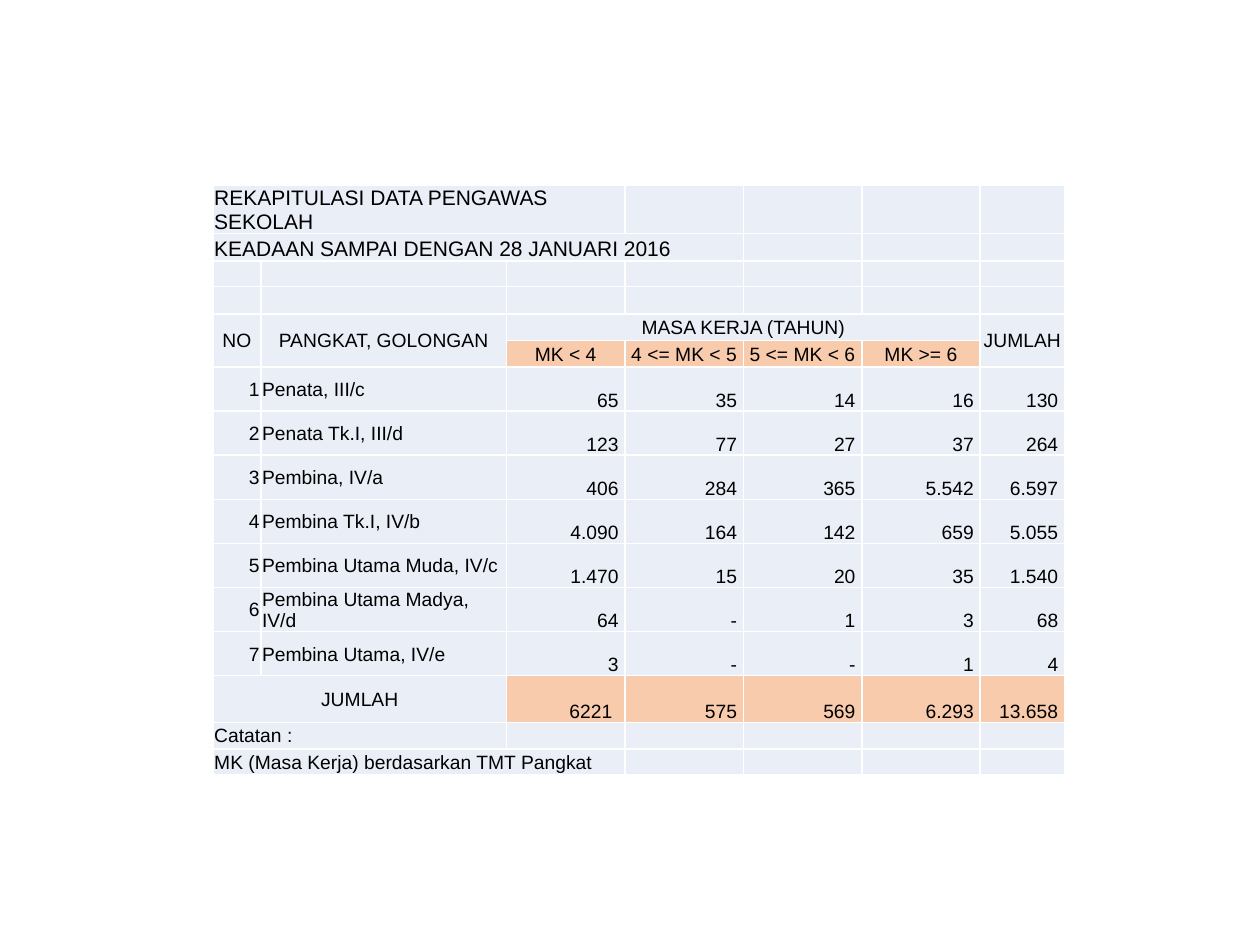
import pptx
import pptx.util
import pptx.dml.color
import pptx.enum.text
import pptx.oxml

ALIGN = pptx.enum.text.PP_ALIGN
ANCHOR = pptx.enum.text.MSO_ANCHOR
PALE, PEACH, WHITE, BLACK = "EAEFF7", "F8CBAD", "FFFFFF", "000000"

TITLES = [
    ("REKAPITULASI DATA PENGAWAS SEKOLAH", 3),
    ("KEADAAN SAMPAI DENGAN 28 JANUARI 2016", 4),
]
SERVICE_BANDS = ["MK < 4", "4 <= MK < 5", "5 <= MK < 6", "MK >= 6"]
RANKS = [
    ("Penata, III/c", "65", "35", "14", "16", "130"),
    ("Penata Tk.I, III/d", "123", "77", "27", "37", "264"),
    ("Pembina, IV/a", "406", "284", "365", "5.542", "6.597"),
    ("Pembina Tk.I, IV/b", "4.090", "164", "142", "659", "5.055"),
    ("Pembina Utama Muda, IV/c", "1.470", "15", "20", "35", "1.540"),
    ("Pembina Utama Madya, IV/d", "64", "-", "1", "3", "68"),
    ("Pembina Utama, IV/e", "3", "-", "-", "1", "4"),
]
TOTALS = ["6221", "575", "569", "6.293", "13.658"]
NOTES = [("Catatan :", 2), ("MK (Masa Kerja) berdasarkan TMT Pangkat", 3)]

COLUMNS = [0.38, 1.95] + [0.94] * 4 + [0.67]
ROWS = [0.38, 0.22, 0.2, 0.22, 0.21, 0.21] + [0.35] * len(RANKS) + [0.37, 0.21, 0.21]
LEFT, TOP = 1.69, 1.47
HEADER_ROW = 4
FIRST_RANK_ROW = HEADER_ROW + 2
TOTAL_ROW = FIRST_RANK_ROW + len(RANKS)


def color(value):
    return pptx.dml.color.RGBColor.from_string(value)


def style_cell(cell, fill=PALE):
    cell.margin_left = cell.margin_right = cell.margin_top = pptx.util.Inches(0.01)
    cell.margin_bottom = 0
    properties = cell._tc.get_or_add_tcPr()
    for side in ("lnL", "lnR", "lnT", "lnB"):
        properties.append(pptx.oxml.parse_xml(
            f'<a:{side} xmlns:a="http://schemas.openxmlformats.org/drawingml/2006/main" w="12700">'
            f'<a:solidFill><a:srgbClr val="{WHITE}"/></a:solidFill></a:{side}>'))
    cell.fill.solid()
    cell.fill.fore_color.rgb = color(fill)
    para = cell.text_frame.paragraphs[0]._p
    para.append(pptx.oxml.parse_xml(
        '<a:endParaRPr xmlns:a="http://schemas.openxmlformats.org/drawingml/2006/main" sz="1100"/>'))


def write(row, column, text, size=11, align=ALIGN.LEFT, anchor=ANCHOR.MIDDLE,
          rows=1, columns=1, fill=None, right=0.01):
    cell = table.cell(row, column)
    if rows > 1 or columns > 1:
        cell.merge(table.cell(row + rows - 1, column + columns - 1))
    cell.vertical_anchor = anchor
    cell.margin_right = pptx.util.Inches(right)
    if fill:
        cell.fill.fore_color.rgb = color(fill)
    para = cell.text_frame.paragraphs[0]
    para.alignment = align
    span = para.add_run()
    span.text = text
    span.font.size = pptx.util.Pt(size)
    span.font.name = "Arial"
    span.font.color.rgb = color(BLACK)


def write_numbers(row, numbers, **options):
    for column, number in enumerate(numbers, 2):
        write(row, column, number, align=ALIGN.RIGHT, anchor=ANCHOR.BOTTOM, right=0.05, **options)


deck = pptx.Presentation()
deck.slide_width = pptx.util.Inches(10)
deck.slide_height = pptx.util.Inches(7.5)
page = deck.slides.add_slide(deck.slide_layouts[6])
table = page.shapes.add_table(
    len(ROWS), len(COLUMNS),
    *(pptx.util.Inches(length) for length in (LEFT, TOP, sum(COLUMNS), sum(ROWS)))).table
table.first_row = table.horz_banding = False
for column, width in zip(table.columns, COLUMNS):
    column.width = pptx.util.Inches(width)
for row, height in zip(table.rows, ROWS):
    row.height = pptx.util.Inches(height)
for cell in table.iter_cells():
    style_cell(cell)

for row, (title, columns) in enumerate(TITLES):
    write(row, 0, title, size=12, anchor=ANCHOR.BOTTOM, columns=columns)

for column, heading in ((0, "NO"), (1, "PANGKAT, GOLONGAN"), (6, "JUMLAH")):
    write(HEADER_ROW, column, heading, align=ALIGN.CENTER, rows=2)
write(HEADER_ROW, 2, "MASA KERJA (TAHUN)", align=ALIGN.CENTER, columns=4)
for column, band in enumerate(SERVICE_BANDS, 2):
    write(HEADER_ROW + 1, column, band, align=ALIGN.CENTER, fill=PEACH)

for number, (rank, *counts) in enumerate(RANKS, 1):
    row = FIRST_RANK_ROW + number - 1
    write(row, 0, str(number), align=ALIGN.RIGHT)
    write(row, 1, rank)
    write_numbers(row, counts)

write(TOTAL_ROW, 0, "JUMLAH", align=ALIGN.CENTER, columns=2)
write_numbers(TOTAL_ROW, TOTALS, fill=PEACH)
table.cell(TOTAL_ROW, 2).margin_right = pptx.util.Inches(0.1)

for row, (note, columns) in enumerate(NOTES, TOTAL_ROW + 1):
    write(row, 0, note, columns=columns)

deck.save("out.pptx")
